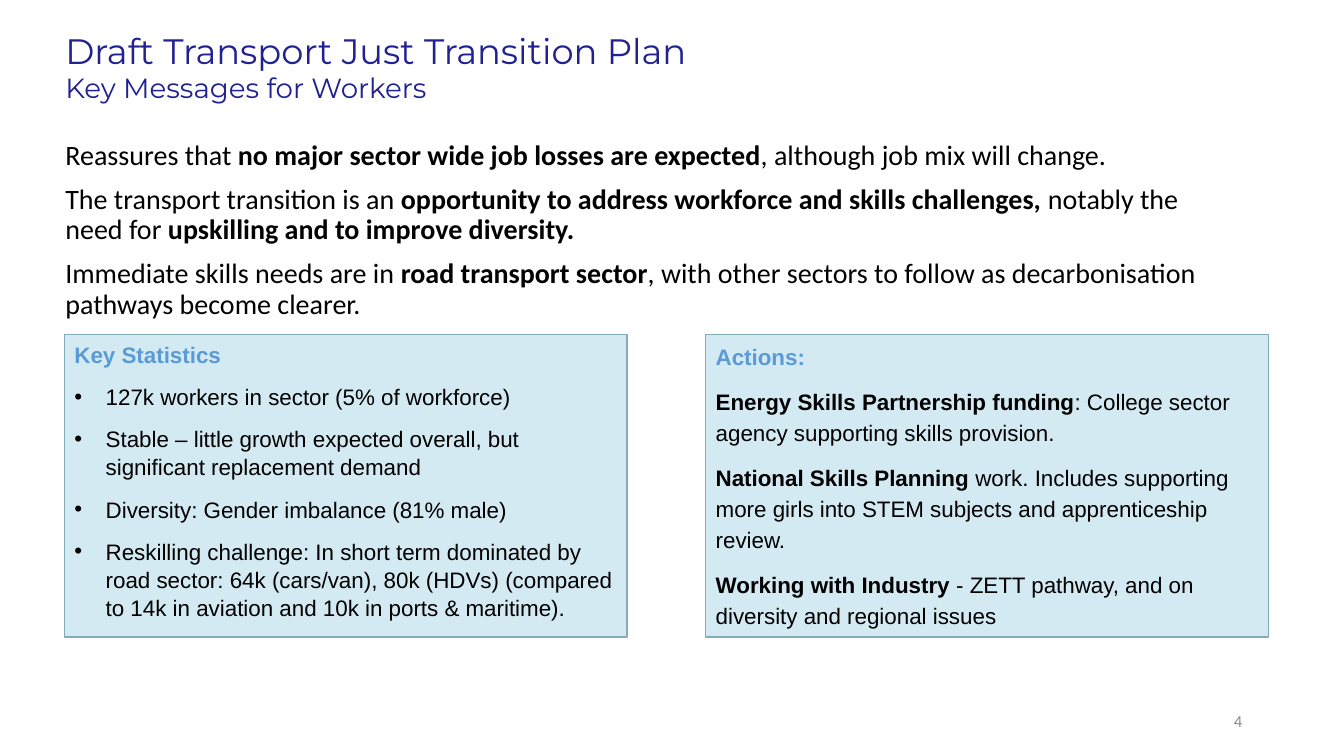
"""Builds the workers' key messages slide of the transport transition plan."""
from pptx import Presentation
from pptx.dml.color import RGBColor
from pptx.enum.shapes import MSO_SHAPE
from pptx.enum.text import MSO_ANCHOR, PP_ALIGN
from pptx.oxml.ns import qn
from pptx.util import Pt
from lxml import etree

RECTANGLE = MSO_SHAPE.RECTANGLE
TOP, MIDDLE = MSO_ANCHOR.TOP, MSO_ANCHOR.MIDDLE
LEFT, RIGHT = PP_ALIGN.LEFT, PP_ALIGN.RIGHT
SCALE = 9144
COLOURS = {
    "title": "212192",
    "text": "000000",
    "heading": "5B9BD5",
    "panel": "D4EAF3",
    "border": "84ACB6",
    "number": "8C8C8C",
}

MESSAGES = [
    [("Reassures that ", False), ("no major sector wide job losses are expected", True),
     (", although job mix will change.", False)],
    [("The transport transition is an ", False),
     ("opportunity to address workforce and skills challenges, ", True),
     ("notably the need for ", False), ("upskilling and to improve diversity.", True)],
    [("Immediate skills needs are in ", False), ("road transport sector", True),
     (", with other sectors to follow as decarbonisation pathways become clearer.", False)],
]
STATISTICS = [
    [("127k workers in sector (5% of workforce)", False)],
    [("Stable – little growth expected overall, but significant replacement demand", False)],
    [("Diversity: Gender imbalance (81% male)", False)],
    [("Reskilling challenge: In short term dominated by road sector: 64k (cars/van), "
      "80k (HDVs) (compared to 14k in aviation and 10k in ports & maritime).", False)],
]
ACTIONS = [
    [("Energy Skills Partnership funding", True),
     (": College sector agency supporting skills provision.", False)],
    [("National Skills Planning ", True),
     ("work. Includes supporting more girls into STEM subjects and apprenticeship review.", False)],
    [("Working with Industry ", True),
     ("- ZETT pathway, and on diversity and regional issues", False)],
]


def px(length):
    return length * SCALE


def colour(name):
    return RGBColor.from_string(COLOURS[name])


def add_span(para, text, font="Arial", size=16, fill="text", bold=False):
    span = para.add_run()
    span.text = text
    span.font.name = font
    span.font.size = Pt(size)
    span.font.bold = bold
    span.font.color.rgb = colour(fill)


def add_bullet(para, indent=31):
    properties = para._p.get_or_add_pPr()
    properties.set("marL", str(px(indent)))
    properties.set("indent", str(-px(indent)))
    etree.SubElement(properties, qn("a:buFont")).set("typeface", "Arial")
    etree.SubElement(properties, qn("a:buChar")).set("char", "•")


class SlideBuilder:
    def __init__(self, page):
        self.page = page

    def frame(self, shape, anchor):
        frame = shape.text_frame
        frame.word_wrap = True
        frame.vertical_anchor = anchor
        return frame

    def text_box(self, left, top, width, height, anchor=TOP):
        box = self.page.shapes.add_textbox(px(left), px(top), px(width), px(height))
        return self.frame(box, anchor)

    def paragraphs(self, frame, rows, spacing, bullets=False, **style):
        for row in rows:
            fresh = not frame.paragraphs[0].runs
            para = frame.paragraphs[0] if fresh else frame.add_paragraph()
            para.alignment = LEFT
            para.line_spacing = spacing
            if not fresh:
                para.space_before = Pt(10)
            if bullets:
                add_bullet(para)
            for text, bold in row:
                add_span(para, text, bold=bold, **style)

    def title(self, heading, subheading):
        para = self.text_box(55, 22, 1150, 88, MIDDLE).paragraphs[0]
        add_span(para, heading, font="Montserrat", size=25.2, fill="title")
        para.add_line_break()
        add_span(para, subheading, font="Montserrat", size=19.8, fill="title")

    def messages(self, rows):
        frame = self.text_box(55, 135, 1150, 434)
        self.paragraphs(frame, rows, 0.9, font="Calibri", size=20)

    def panel(self, left, heading, rows, spacing, bullets=False):
        panel = self.page.shapes.add_shape(RECTANGLE, px(left), px(332), px(558), px(300))
        panel.shadow.inherit = False
        panel.fill.solid()
        panel.fill.fore_color.rgb = colour("panel")
        panel.line.color.rgb = colour("border")
        panel.line.width = Pt(1)
        frame = self.frame(panel, TOP)
        self.paragraphs(frame, [[(heading, True)]], spacing, fill="heading")
        self.paragraphs(frame, rows, spacing, bullets)

    def page_number(self, number):
        para = self.text_box(942, 695, 300, 40, MIDDLE).paragraphs[0]
        para.alignment = RIGHT
        add_span(para, number, font="Calibri", size=12, fill="number")


def main():
    deck = Presentation()
    deck.slide_width, deck.slide_height = px(1333), px(750)
    builder = SlideBuilder(deck.slides.add_slide(deck.slide_layouts[6]))
    builder.title("Draft Transport Just Transition Plan", "Key Messages for Workers")
    builder.messages(MESSAGES)
    builder.panel(64, "Key Statistics", STATISTICS, 1.05, bullets=True)
    builder.panel(700, "Actions:", ACTIONS, 1.15)
    builder.page_number("4")
    deck.save("out.pptx")


if __name__ == "__main__":
    main()
